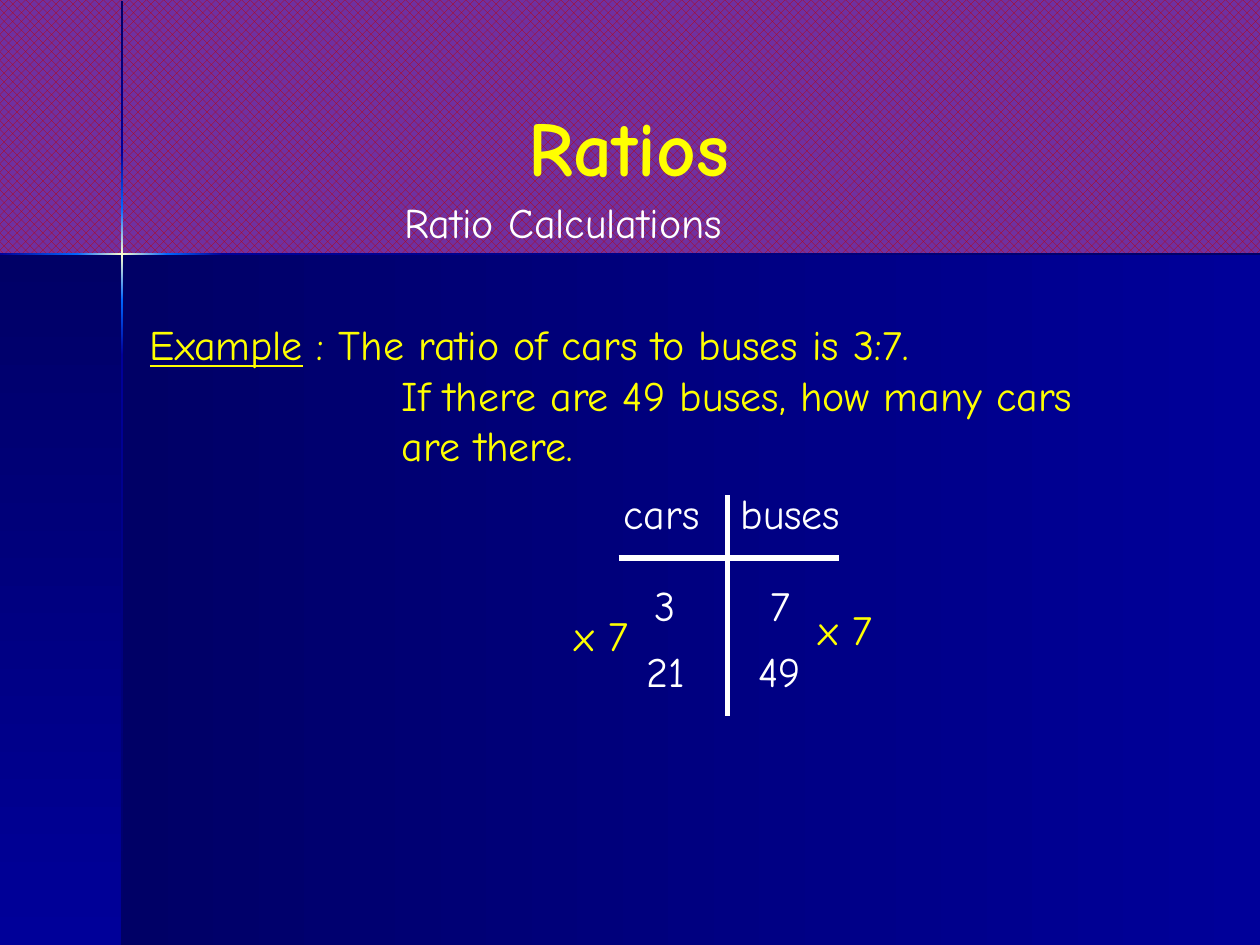
from itertools import pairwise

from lxml import etree
from pptx import Presentation
from pptx.dml.color import RGBColor
from pptx.enum.dml import MSO_PATTERN
from pptx.enum.shapes import MSO_CONNECTOR, MSO_SHAPE
from pptx.enum.text import MSO_ANCHOR, MSO_AUTO_SIZE, PP_ALIGN
from pptx.oxml.ns import qn
from pptx.util import Cm, Pt

RECT = MSO_SHAPE.RECTANGLE
STRAIGHT = MSO_CONNECTOR.STRAIGHT
DOTS = MSO_PATTERN.PERCENT_50
FONT = "Comic Neue"
HEX = {
    "red": "C00000", "purple": "7030A0", "navy": "000066", "blue": "000099",
    "bright": "0066FF", "cream": "FFFFCC", "yellow": "FFFF00", "white": "FFFFFF",
}
COLORS = {name: RGBColor.from_string(value) for name, value in HEX.items()}

prs = Presentation()
prs.slide_width, prs.slide_height = Cm(25.4), Cm(19.05)
s = prs.slides.add_slide(prs.slide_layouts[5])


def add_gradient(x, y, w, h, start, end, angle):
    """Add a rectangle shaded from start to end; 0 runs right, 270 runs down."""
    sp = s.shapes.add_shape(RECT, Cm(x), Cm(y), Cm(w), Cm(h))
    sp.shadow.inherit = False
    sp.line.fill.background()
    sp.fill.gradient()
    sp.fill.gradient_angle = angle
    for stop, color, position in zip(sp.fill.gradient_stops, (start, end), (0, 1)):
        stop.color.rgb = COLORS[color]
        stop.position = position


def add_run(p, text, color, size=24):
    r = p.add_run()
    r.text = text
    r.font.name = FONT
    r.font.size = Pt(size)
    r.font.color.rgb = COLORS[color]
    return r


# Background and panels
fill = s.background.fill
fill.patterned()
fill.pattern = DOTS
fill.fore_color.rgb = COLORS["red"]
fill.back_color.rgb = COLORS["purple"]
add_gradient(2.46, 5.13, 22.94, 13.92, "navy", "blue", 0)
add_gradient(0, 5.13, 2.46, 13.92, "navy", "blue", 270)

# Thin glowing bars that cross at the panel corner
BAR = 0.05
down = [(0.03, "navy"), (3.07, "blue"), (4.19, "bright"), (5.13, "cream"),
        (6.05, "bright"), (7.16, "blue"), (19.05, "navy")]
across = [(0, "blue"), (1.55, "bright"), (2.46, "cream"),
          (3.38, "bright"), (4.5, "blue"), (25.4, "navy")]
for (y1, c1), (y2, c2) in pairwise(down):
    add_gradient(2.44, y1, BAR, y2 - y1, c1, c2, 270)
for (x1, c1), (x2, c2) in pairwise(across):
    add_gradient(x1, 5.1, x2 - x1, BAR, c1, c2, 0)

# Title
title = s.shapes.title
title.left, title.top, title.width, title.height = Cm(5.38), Cm(2.06), Cm(14.6), Cm(1.93)
tf = title.text_frame
tf.auto_size = MSO_AUTO_SIZE.NONE
tf.vertical_anchor = MSO_ANCHOR.BOTTOM
p = tf.paragraphs[0]
p.alignment = PP_ALIGN.CENTER
add_run(p, "Ratios", "yellow", 44).font.bold = True

# Worked example
tf = s.shapes.add_textbox(Cm(2.77), Cm(6.3), Cm(20.68), Cm(3.3)).text_frame
tf.word_wrap = True
p = tf.paragraphs[0]
add_run(p, "Example", "yellow").font.underline = True
add_run(p, " : \tThe ratio of cars to buses is 3:7.", "yellow")
for text in ("If there are 49 buses, how many cars", "are there."):
    p = tf.add_paragraph()
    p._p.get_or_add_pPr().set("marL", str(Cm(5.08)))
    add_run(p, text, "yellow")

# Ratio grid
for x1, y1, x2, y2 in ((14.66, 9.98, 14.66, 14.43), (12.47, 11.25, 16.92, 11.25)):
    line = s.shapes.add_connector(STRAIGHT, Cm(x1), Cm(y1), Cm(x2), Cm(y2))
    line.line.color.rgb = COLORS["white"]
    line.line.width = Pt(3)
    etree.SubElement(line._element.spPr, qn("a:effectLst"))

labels = [
    ("Ratio Calculations", 7.9, 3.84, 7.47, "white"),
    ("cars", 12.32, 9.7, 2.18, "white"),
    ("buses", 14.68, 9.7, 2.74, "white"),
    ("3", 12.95, 11.56, 1.02, "white"),
    ("7", 15.29, 11.56, 1.02, "white"),
    ("21", 12.78, 12.88, 1.4, "white"),
    ("49", 15.04, 12.88, 1.55, "white"),
    ("x 7", 11.33, 12.17, 1.78, "yellow"),
    ("x 7", 16.26, 12.04, 1.78, "yellow"),
]
for text, x, y, w, color in labels:
    tf = s.shapes.add_textbox(Cm(x), Cm(y), Cm(w), Cm(1.27)).text_frame
    tf.word_wrap = False
    add_run(tf.paragraphs[0], text, color)

prs.save("out.pptx")
